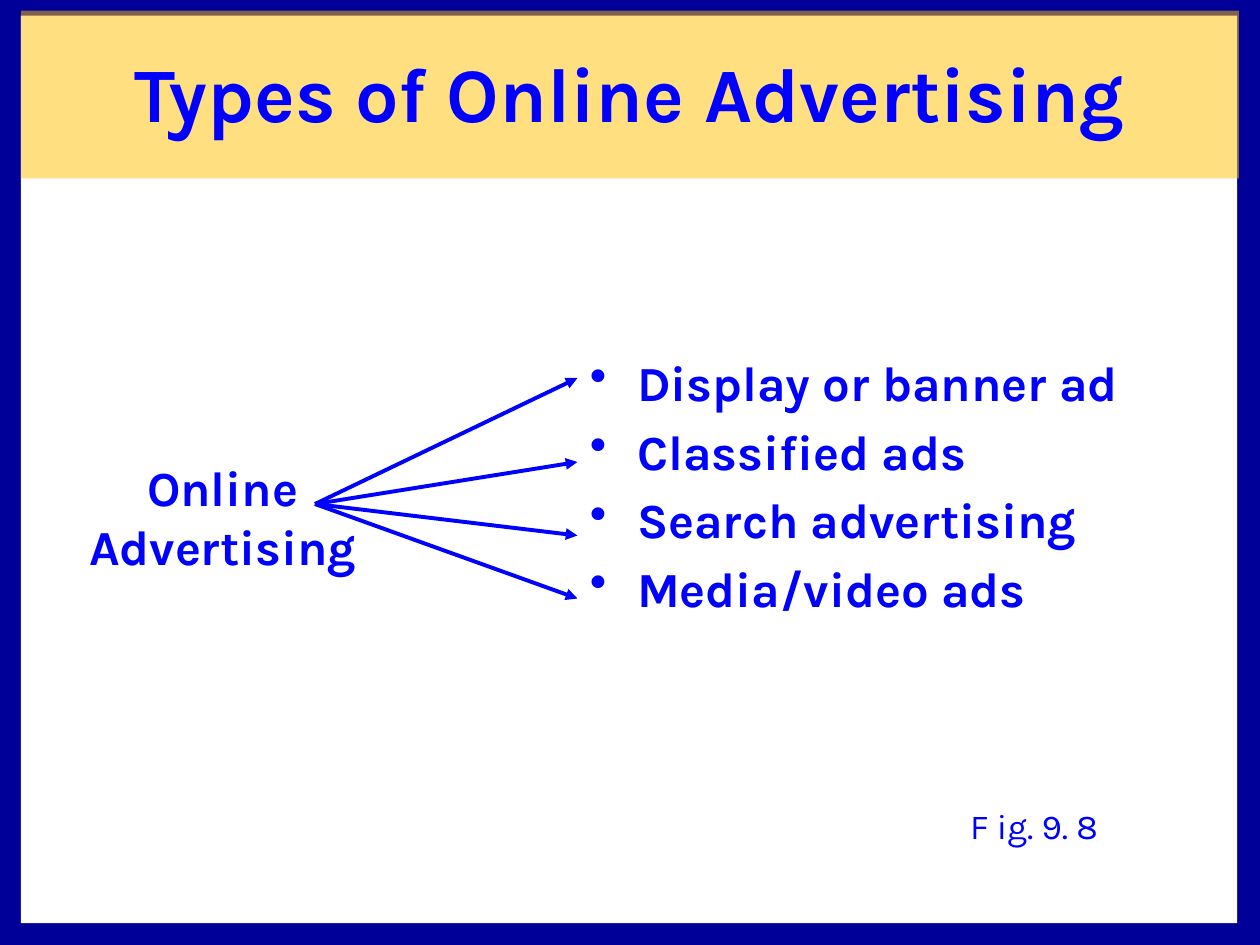
"""Build the slide on the types of online advertising."""
from lxml import etree
from pptx import Presentation
from pptx.dml.color import RGBColor
from pptx.enum.shapes import MSO_CONNECTOR, MSO_SHAPE
from pptx.enum.text import MSO_ANCHOR, PP_ALIGN
from pptx.oxml.ns import qn
from pptx.util import Pt

RECTANGLE = MSO_SHAPE.RECTANGLE
STRAIGHT = MSO_CONNECTOR.STRAIGHT
LEFT, CENTER = PP_ALIGN.LEFT, PP_ALIGN.CENTER
TOP, MIDDLE = MSO_ANCHOR.TOP, MSO_ANCHOR.MIDDLE

FONT = "Karla"
BLUE, NAVY, WHITE, GOLD = "0000FF", "000099", "FFFFFF", "FFC000"

TITLE = "Types of Online Advertising"
TOPIC = ["Online", "Advertising"]
AD_TYPES = ["Display or banner ad", "Classified ads", "Search advertising", "Media/video ads"]
FIGURE = "F ig. 9. 8"

FRAME = [
    ((0, -6, 720, 551), NAVY),
    ((12, 9, 695, 518.5), WHITE),
    ((24, 23, 672, 504), WHITE),
]
BAND = (12, 6, 696, 96)
ARROW_START = (180, 288)
ARROW_END_X = 330
ARROW_END_YS = [216, 264, 306, 342]


def color(value):
    return RGBColor.from_string(value)


def add_panel(slide, box, fill, opacity=None):
    panel = slide.shapes.add_shape(RECTANGLE, *map(Pt, box))
    panel.shadow.inherit = False
    panel.fill.solid()
    panel.fill.fore_color.rgb = color(fill)
    panel.line.fill.background()
    if opacity is not None:
        tint = panel.fill._xPr.find(".//" + qn("a:srgbClr"))
        etree.SubElement(tint, qn("a:alpha"), val=str(opacity * 1000))


def add_text(slide, box, lines, size, bold=True, align=CENTER, anchor=TOP, wrap=True):
    frame = slide.shapes.add_textbox(*map(Pt, box)).text_frame
    frame.word_wrap = wrap
    frame.vertical_anchor = anchor
    for index, line in enumerate(lines):
        paragraph = frame.paragraphs[0] if index == 0 else frame.add_paragraph()
        paragraph.alignment = align
        run = paragraph.add_run()
        run.text = line
        run.font.name = FONT
        run.font.size = Pt(size)
        run.font.bold = bold
        run.font.color.rgb = color(BLUE)
    return frame


def add_bullets(frame, indent, gap):
    for paragraph in frame.paragraphs:
        paragraph.space_before = Pt(gap)
        properties = paragraph._p.get_or_add_pPr()
        properties.set("marL", str(Pt(indent)))
        properties.set("indent", str(-Pt(indent)))
        bullet_color = etree.SubElement(properties, qn("a:buClr"))
        etree.SubElement(bullet_color, qn("a:srgbClr"), val=BLUE)
        etree.SubElement(properties, qn("a:buChar"), char="•")


def add_arrow(slide, start, end):
    arrow = slide.shapes.add_connector(STRAIGHT, *map(Pt, start + end))
    arrow.line.color.rgb = color(BLUE)
    arrow.line.width = Pt(2.25)
    etree.SubElement(arrow.line._get_or_add_ln(), qn("a:tailEnd"), type="triangle")
    etree.SubElement(arrow._element.spPr, qn("a:effectLst"))


def main():
    presentation = Presentation()
    presentation.slide_width, presentation.slide_height = Pt(720), Pt(540)
    slide = presentation.slides.add_slide(presentation.slide_layouts[6])

    for box, fill in FRAME:
        add_panel(slide, box, fill)
    add_panel(slide, BAND, GOLD, opacity=50)

    add_text(slide, (516, 456, 150, 31.5), [FIGURE], 20, bold=False)
    add_text(slide, (24, 9, 672, 86.5), [TITLE], 44, anchor=MIDDLE)
    ad_list = add_text(slide, (330, 198, 396, 222), AD_TYPES, 28, align=LEFT)
    add_bullets(ad_list, indent=27, gap=5.6)
    add_text(slide, (39, 258, 176.5, 75), TOPIC, 28, wrap=False)

    for end_y in ARROW_END_YS:
        add_arrow(slide, ARROW_START, (ARROW_END_X, end_y))

    presentation.save("out.pptx")


if __name__ == "__main__":
    main()
